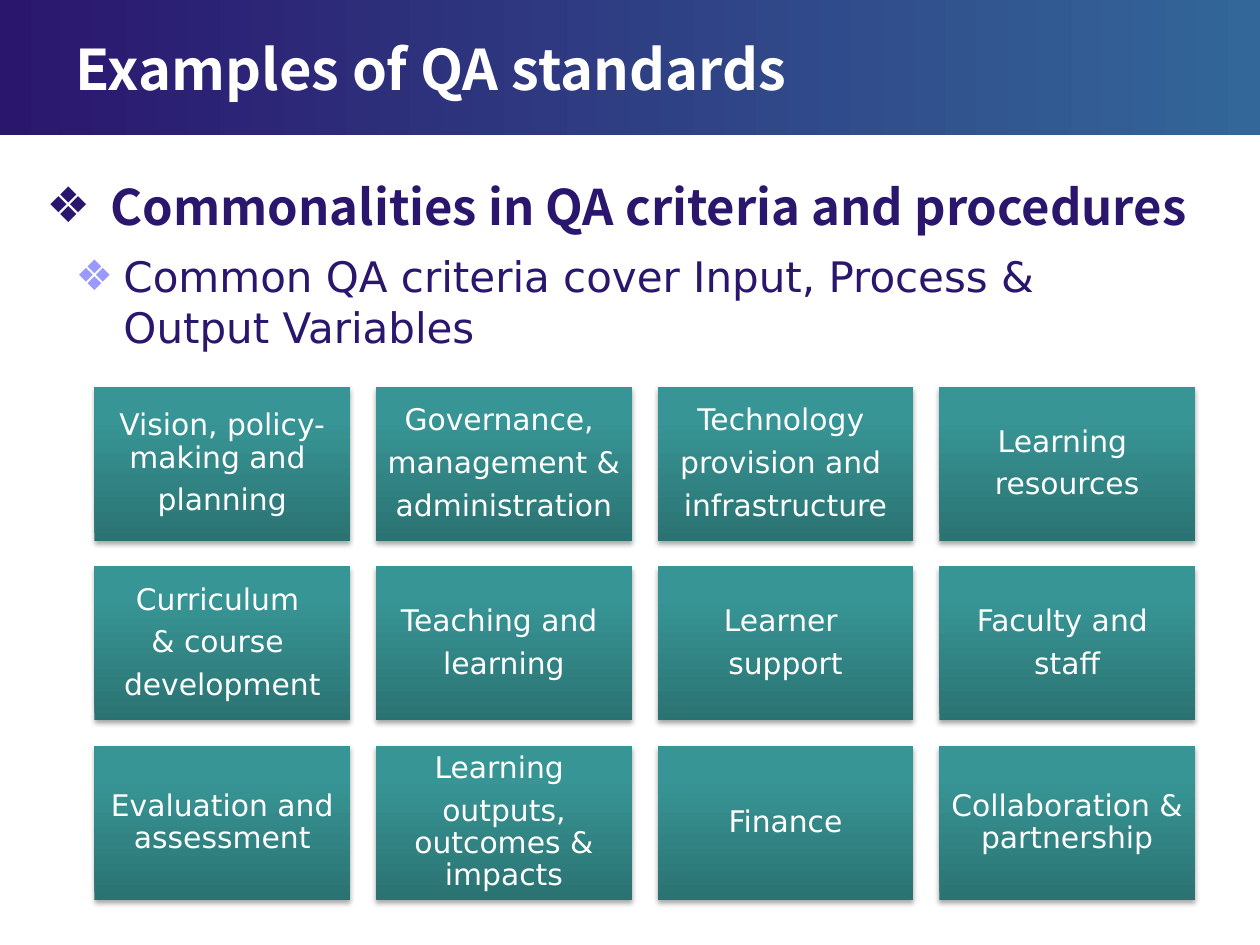
import pptx
import pptx.util
import pptx.dml.color
import pptx.enum.shapes
import pptx.enum.text
import pptx.oxml
import pptx.oxml.ns

Inches, Pt = pptx.util.Inches, pptx.util.Pt
RGB = pptx.dml.color.RGBColor.from_string
ALIGN = pptx.enum.text.PP_ALIGN
MIDDLE = pptx.enum.text.MSO_ANCHOR.MIDDLE
RECT = pptx.enum.shapes.MSO_SHAPE.RECTANGLE
NS = pptx.oxml.ns.nsdecls("a")

theme = {
    "ink": "2B166E", "white": "FFFFFF", "bullet": "9999FF",
    "banner": [(0, "2B166E"), (100, "336699")],
    "tile": [(0, "2B7373"), (80, "389595"), (100, "379898")],
    "head_font": "Noto Sans CJK KR", "body_font": "DejaVu Sans",
    "title": 32, "heading": 28, "body": 24, "label": 17,
}


def style(p, font, size, color, bold=False):
    for r in p.runs:
        r.font.name, r.font.size, r.font.bold = font, Pt(size), bold
        r.font.color.rgb = RGB(color)


def add_bullet(p, indent, color):
    pPr = p._p.get_or_add_pPr()
    pPr.set("marL", str(Inches(indent)))
    pPr.set("indent", str(-Inches(indent)))
    for xml in (f'<a:buClr {NS}><a:srgbClr val="{color}"/></a:buClr>',
                f'<a:buFont {NS} typeface="{theme["body_font"]}"/>',
                f'<a:buChar {NS} char="❖"/>'):
        pPr.append(pptx.oxml.parse_xml(xml))


prs = pptx.Presentation()
prs.slide_width, prs.slide_height = Inches(10), Inches(7.5)
s = prs.slides.add_slide(prs.slide_layouts[1])
title, body = s.shapes.title, s.placeholders[1]

# Banner behind the title, then the grid of tiles
rows = [
    ["Vision, policy-making and \nplanning",
     "Governance, \nmanagement &\nadministration",
     "Technology \nprovision and \ninfrastructure",
     "Learning \nresources"],
    ["Curriculum \n& course \ndevelopment",
     "Teaching and \nlearning",
     "Learner \nsupport",
     "Faculty and \nstaff"],
    ["Evaluation and assessment",
     "Learning \noutputs, outcomes & impacts",
     "Finance",
     "Collaboration & partnership"],
]
left, top, width, height, gap = 0.75, 3.07, 2.03, 1.22, 0.205
blocks = [(0, 0, 10, 1.07, "", "banner", 0)]
for i, row in enumerate(rows):
    for j, label in enumerate(row):
        blocks.append((left + j * (width + gap), top + i * (height + gap),
                       width, height, label, "tile", 90))

for x, y, w, h, label, stops, angle in blocks:
    sp = s.shapes.add_shape(RECT, Inches(x), Inches(y), Inches(w), Inches(h))
    sp.line.fill.background()
    sp.shadow.inherit = False
    sp.fill.gradient()
    sp.fill.gradient_angle = angle
    gs_list = sp._element.spPr.find(".//" + pptx.oxml.ns.qn("a:gsLst"))
    for gs in list(gs_list):
        gs_list.remove(gs)
    for pos, color in theme[stops]:
        gs_list.append(pptx.oxml.parse_xml(
            f'<a:gs {NS} pos="{pos * 1000}"><a:srgbClr val="{color}"/></a:gs>'))
    if not label:
        s.shapes._spTree.insert(2, sp._element)
        continue

    # Soft shadow below each tile
    effects = sp._element.spPr.find(pptx.oxml.ns.qn("a:effectLst"))
    effects.append(pptx.oxml.parse_xml(
        f'<a:outerShdw {NS} blurRad="{Pt(3.1)}" dist="{Pt(1.8)}" dir="5400000" '
        'rotWithShape="0"><a:srgbClr val="000000"><a:alpha val="35000"/>'
        '</a:srgbClr></a:outerShdw>'))

    # Tile label
    tf = sp.text_frame
    tf.text = label
    tf.word_wrap = True
    tf.vertical_anchor = MIDDLE
    tf.margin_left = tf.margin_right = Inches(0.07)
    tf.margin_top = tf.margin_bottom = Inches(0.07)
    for p in tf.paragraphs:
        p.alignment = ALIGN.CENTER
        p.line_spacing = 0.9
        p.space_after = Pt(6)
        style(p, theme["body_font"], theme["label"], theme["white"])

# Title, heading and body text
heading = s.shapes.add_textbox(0, 0, 0, 0)
texts = [
    (title, (0.5, 0.23, 6.75, 0.62), "Examples of QA standards",
     "head_font", "title", "white", True, None),
    (heading, (0.27, 1.25, 9.73, 0.77),
     "Commonalities in QA criteria and procedures",
     "head_font", "heading", "ink", True, (0.51, theme["ink"])),
    (body, (0.5, 1.94, 9, 5.12),
     "Common QA criteria cover Input, Process & Output Variables",
     "body_font", "body", "ink", False, (0.38, theme["bullet"])),
]
for sp, box, text, font, size, color, bold, bullet in texts:
    sp.left, sp.top, sp.width, sp.height = [Inches(v) for v in box]
    tf = sp.text_frame
    tf.text = text
    tf.word_wrap = True
    tf.auto_size = pptx.enum.text.MSO_AUTO_SIZE.NONE
    tf.vertical_anchor = pptx.enum.text.MSO_ANCHOR.TOP if sp is body else MIDDLE
    p = tf.paragraphs[0]
    if bullet:
        add_bullet(p, *bullet)
    p.alignment = ALIGN.LEFT
    p.space_before = Pt(0)
    style(p, theme[font], theme[size], theme[color], bold)

prs.save("out.pptx")
